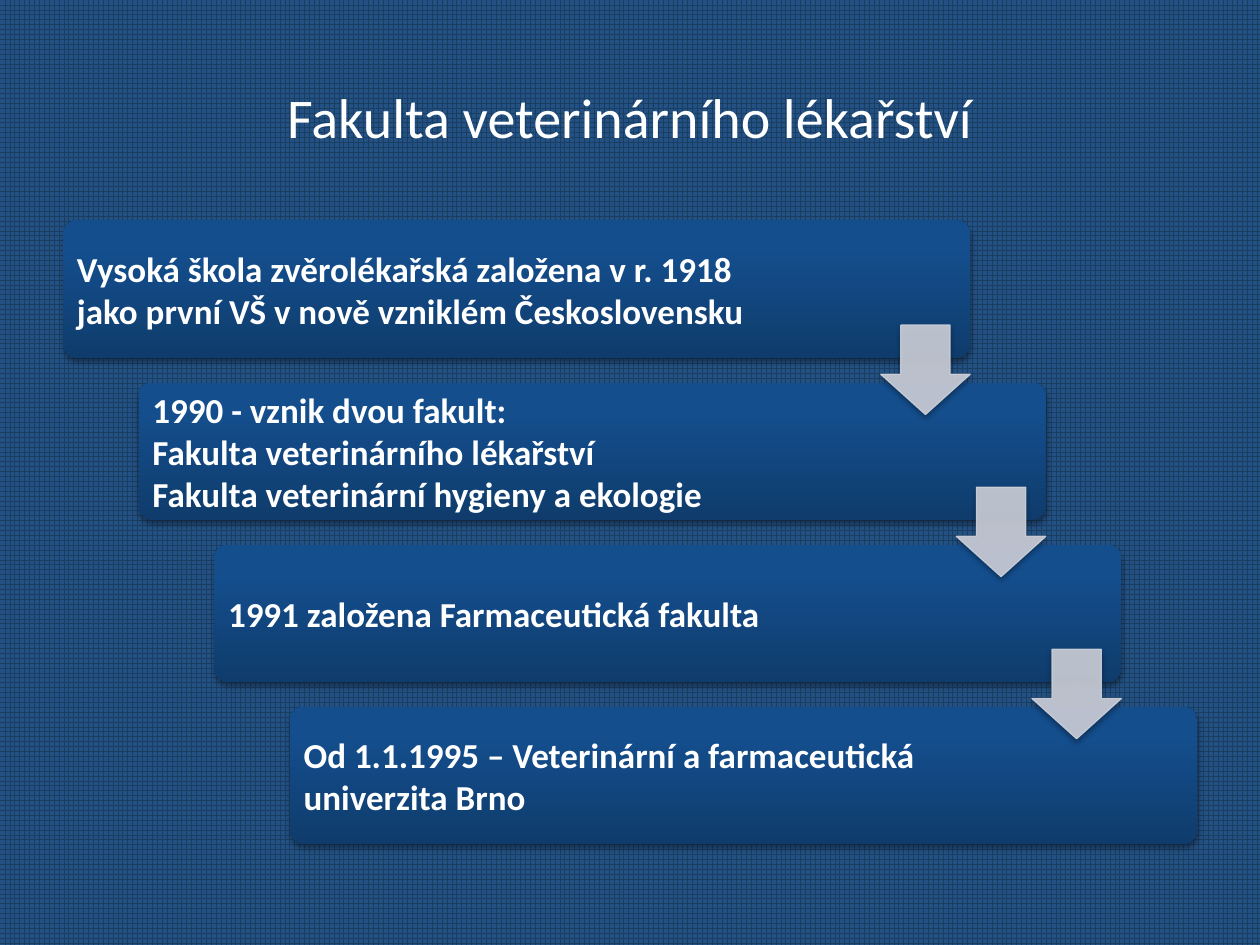
from copy import deepcopy

from lxml.etree import SubElement
from pptx import Presentation
from pptx.dml.color import RGBColor
from pptx.enum.dml import MSO_PATTERN
from pptx.enum.shapes import MSO_SHAPE as Shape
from pptx.enum.text import MSO_ANCHOR as Anchor, PP_ALIGN as Align
from pptx.oxml.ns import qn
from pptx.util import Inches, Pt

WHITE = RGBColor(0xFF, 0xFF, 0xFF)
GRID_LINE = RGBColor(0x1A, 0x3D, 0x62)
GRID_BASE = RGBColor(0x23, 0x51, 0x83)
ARROW_GREY = RGBColor(0xCD, 0xD0, 0xD9)
CARD_STOPS = [
    (0, RGBColor(0x0F, 0x3C, 0x6C)),
    (0.8, RGBColor(0x14, 0x4E, 0x8D)),
    (1, RGBColor(0x12, 0x4E, 0x90)),
]
TITLE_FONT = {"name": "Calibri", "size": Pt(32)}
CARD_FONT = {"name": "Calibri", "size": Pt(20), "bold": True}

TITLE = "Fakulta veterinárního lékařství"
MILESTONES = [
    ["Vysoká škola zvěrolékařská založena v r. 1918 jako první VŠ v nově vzniklém Československu"],
    ["1990 - vznik dvou fakult:", "Fakulta veterinárního lékařství",
     "Fakulta veterinární hygieny a ekologie"],
    ["1991 založena Farmaceutická fakulta"],
    ["Od 1.1.1995 – Veterinární a farmaceutická univerzita Brno"],
]
CARD_WIDTH, CARD_HEIGHT = Inches(7.2), Inches(1.09)
ARROW_SIZE, ARROW_DROP = Inches(0.71), Inches(0.83)


def add_text(shapes, box, lines, font_format, align, inset):
    """Write lines of text, vertically centred in the box."""
    frame = shapes.add_textbox(*box).text_frame
    frame_format = {"word_wrap": True, "vertical_anchor": Anchor.MIDDLE}
    frame_format |= {f"margin_{side}": inset for side in ("left", "right", "top", "bottom")}
    for key, value in frame_format.items():
        setattr(frame, key, value)
    frame.text = "\n".join(lines)
    for paragraph in frame.paragraphs:
        paragraph.alignment = align
        paragraph.font.color.rgb = WHITE
        for key, value in font_format.items():
            setattr(paragraph.font, key, value)


def add_shadow(shape):
    """Give the shape a soft shadow straight below it."""
    shape.shadow.inherit = False
    effects = shape._element.spPr.find(qn("a:effectLst"))
    shadow = SubElement(effects, qn("a:outerShdw"), blurRad="40000", dist="23000",
                        dir="5400000", rotWithShape="0")
    black = SubElement(shadow, qn("a:srgbClr"), val="000000")
    SubElement(black, qn("a:alpha"), val="35000")


def add_card(shapes, box, lines):
    """Place one gradient card with its milestone text."""
    left, top, width, height = box
    card = shapes.add_shape(Shape.ROUNDED_RECTANGLE, *box)
    card.adjustments[0] = 0.1
    card.fill.gradient()
    card.fill.gradient_angle = 90
    stop_list = card._element.spPr.find(qn("a:gradFill")).find(qn("a:gsLst"))
    stop_list.append(deepcopy(stop_list[-1]))
    for stop, (position, color) in zip(card.fill.gradient_stops, CARD_STOPS):
        stop.position = position
        stop.color.rgb = color
    card.line.fill.background()
    add_shadow(card)
    pad = Inches(0.03)
    text_box = left + pad, top + pad, Inches(5.88), height - 2 * pad
    add_text(shapes, text_box, lines, CARD_FONT, Align.LEFT, Inches(0.08))


def add_arrow(shapes, box):
    """Place one translucent arrow pointing down."""
    arrow = shapes.add_shape(Shape.DOWN_ARROW, *box)
    arrow.adjustments[0], arrow.adjustments[1] = 0.55, 0.45
    arrow.line.width = Pt(0.75)
    for fill in (arrow.fill, arrow.line.fill):
        fill.solid()
        fill.fore_color.rgb = ARROW_GREY
    for color in arrow._element.spPr.iter(qn("a:srgbClr")):
        SubElement(color, qn("a:alpha"), val="90000")
    add_shadow(arrow)


def add_staircase(slide, box, milestones):
    """Step the cards from the top left to the bottom right of the box."""
    left, top, width, height = box
    shapes = slide.shapes.add_group_shape().shapes
    steps = len(milestones) - 1
    corners = [(left + (width - CARD_WIDTH) * i // steps,
                top + (height - CARD_HEIGHT) * i // steps) for i in range(steps + 1)]
    for (x, y), lines in zip(corners, milestones):
        add_card(shapes, (x, y, CARD_WIDTH, CARD_HEIGHT), lines)
    for x, y in corners[:-1]:
        add_arrow(shapes, (x + CARD_WIDTH - ARROW_SIZE, y + ARROW_DROP, ARROW_SIZE, ARROW_SIZE))


def paint_background(slide):
    """Cover the slide with a fine grid pattern."""
    fill = slide.background.fill
    fill.patterned()
    fill.pattern = MSO_PATTERN.LARGE_GRID
    fill.fore_color.rgb = GRID_LINE
    fill.back_color.rgb = GRID_BASE


def main():
    """Build and save the slide."""
    deck = Presentation()
    deck.slide_width, deck.slide_height = Inches(10), Inches(7.5)
    slide = deck.slides.add_slide(deck.slide_layouts[6])
    paint_background(slide)
    title_box = [Inches(n) for n in (0.5, 0.3, 9, 1.25)]
    add_text(slide.shapes, title_box, [TITLE], TITLE_FONT, Align.CENTER, Inches(0.1))
    add_staircase(slide, [Inches(n) for n in (0.5, 1.75, 9, 4.95)], MILESTONES)
    deck.save("out.pptx")


if __name__ == "__main__":
    main()
